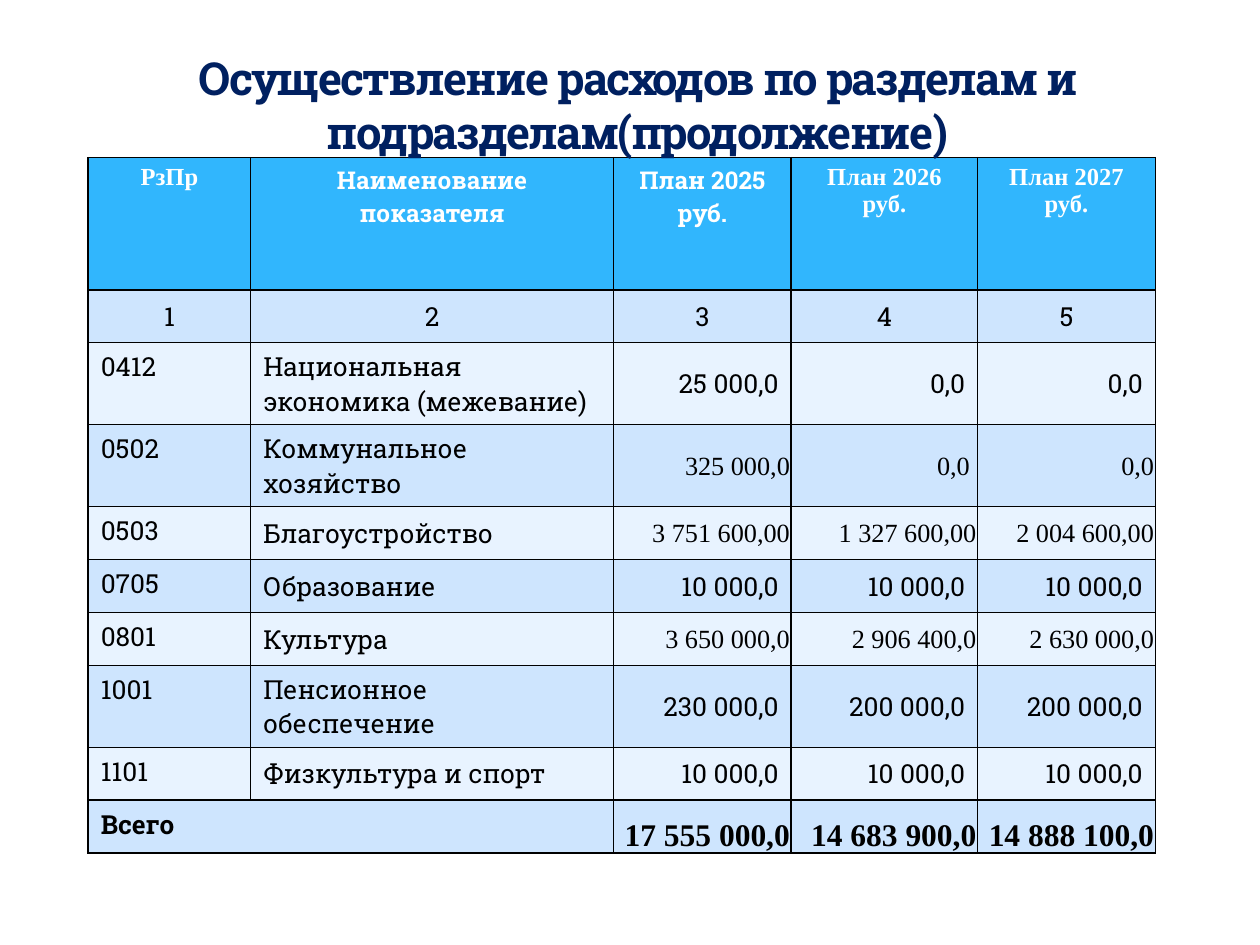
from dataclasses import dataclass, field

from lxml.etree import SubElement
from pptx import Presentation
from pptx.dml.color import RGBColor
from pptx.enum.text import MSO_ANCHOR as Anchor, PP_ALIGN as Align
from pptx.oxml.ns import qn
from pptx.slide import Slide
from pptx.util import Inches, Pt

COLORS = {
    "title": "002060",
    "header": "31B6FD",
    "band_dark": "CEE5FE",
    "band_light": "E8F3FF",
    "text": "000000",
    "header_text": "FFFFFF",
    "border": "000000",
}
SLAB, TIMES = "Roboto Slab", "Times New Roman"
HEADER_FONTS = [TIMES, SLAB, SLAB, TIMES, TIMES]
TIGHT_CODES = {"0502", "0503", "0801"}
COLUMN_WIDTHS = [12.9, 28.8, 14.1, 14.8, 14.1]
ROW_HEIGHTS = [10.5, 4.2, 5.9] + [4.2] * 7

TITLE = "Осуществление расходов по разделам и подразделам(продолжение)"
HEADER = ["РзПр", "Наименование показателя", "План 2025 руб.", "План 2026 руб.", "План 2027 руб."]
SECTIONS = [
    ["0412", "Национальная экономика (межевание)", "25 000,0", "0,0", "0,0"],
    ["0502", "Коммунальное хозяйство", "325 000,0", "0,0 ", "0,0"],
    ["0503", "Благоустройство", "3 751 600,00", "1 327 600,00", "2 004 600,00"],
    ["0705", "Образование", "10 000,0", "10 000,0", "10 000,0"],
    ["0801", "Культура", "3 650 000,0", "2 906 400,0", "2 630 000,0"],
    ["1001", "Пенсионное обеспечение", "230 000,0", "200 000,0", "200 000,0"],
    ["1101", "Физкультура и спорт", "10 000,0", "10 000,0", "10 000,0"],
]
TOTAL = ["Всего", "", "17 555 000,0", "14 683 900,0", "14 888 100,0"]


@dataclass
class BudgetSlide:
    """Style and current slide, laid out on a grid of 100 columns by 75 rows."""

    slide: Slide
    unit: int = Inches(0.1)
    colors: dict = field(default_factory=lambda: COLORS)

    def grid(self, *lengths):
        return [round(length * self.unit) for length in lengths]

    def color(self, name):
        return RGBColor.from_string(self.colors[name])

    def label(self, frame, text, size, font=SLAB, color="text", bold=False, align=Align.LEFT):
        paragraph = frame.paragraphs[0]
        paragraph.text = text
        paragraph.alignment = align
        paragraph.font.size = Pt(size)
        paragraph.font.name = font
        paragraph.font.bold = bold
        paragraph.font.color.rgb = self.color(color)
        return paragraph

    def title(self, text, left, top, width, height):
        shape = self.slide.shapes.add_textbox(*self.grid(left, top, width, height))
        frame = shape.text_frame
        frame.word_wrap = True
        frame.vertical_anchor = Anchor.BOTTOM
        frame.margin_top = frame.margin_bottom = 0
        paragraph = self.label(frame, text, 26, color="title", bold=True, align=Align.CENTER)
        paragraph.runs[0]._r.get_or_add_rPr().set("spc", "-100")

    def table(self, left, top, widths, heights):
        frame = self.slide.shapes.add_table(
            len(heights), len(widths), *self.grid(left, top, sum(widths), sum(heights))
        )
        table = frame.table
        for column, width in zip(table.columns, self.grid(*widths)):
            column.width = width
        for row, height in zip(table.rows, self.grid(*heights)):
            row.height = height
        return table

    def borders(self, cell):
        properties = cell._tc.get_or_add_tcPr()
        for index, side in enumerate(("a:lnL", "a:lnR", "a:lnT", "a:lnB")):
            line = properties.makeelement(qn(side), {"w": str(Pt(1))})
            fill = SubElement(line, qn("a:solidFill"))
            SubElement(fill, qn("a:srgbClr"), val=self.colors["border"])
            properties.insert(index, line)

    def cell(self, cell, text, fill, size=15, anchor=Anchor.TOP, tight=False, **style):
        cell.fill.solid()
        cell.fill.fore_color.rgb = self.color(fill)
        self.borders(cell)
        cell.vertical_anchor = anchor
        if tight:
            cell.margin_left = cell.margin_right = cell.margin_top = Inches(0.01)
            cell.margin_bottom = 0
        if text:
            self.label(cell.text_frame, text, size, **style)

    def amounts(self, cells, texts, fill, tight, **style):
        for cell, text in zip(cells, texts):
            self.cell(cell, text, fill, tight=tight, font=TIMES if tight else SLAB,
                      align=Align.RIGHT, **style)


def main():
    presentation = Presentation()
    presentation.slide_width, presentation.slide_height = Inches(10), Inches(7.5)
    budget = BudgetSlide(presentation.slides.add_slide(presentation.slide_layouts[6]))

    table = budget.table(7, 12.5, COLUMN_WIDTHS, ROW_HEIGHTS)
    rows = [list(row.cells) for row in table.rows]
    for index, (text, font) in enumerate(zip(HEADER, HEADER_FONTS)):
        budget.cell(rows[0][index], text, "header", size=14, font=font,
                    color="header_text", bold=True, align=Align.CENTER)
        budget.cell(rows[1][index], str(index + 1), "band_dark",
                    anchor=Anchor.MIDDLE, align=Align.CENTER)

    for index, (cells, section) in enumerate(zip(rows[2:], SECTIONS)):
        code, name, *amounts = section
        fill = "band_dark" if index % 2 else "band_light"
        budget.cell(cells[0], code, fill)
        budget.cell(cells[1], name, fill, anchor=Anchor.MIDDLE if index else Anchor.TOP)
        budget.amounts(cells[2:], amounts, fill, code in TIGHT_CODES, anchor=Anchor.MIDDLE)

    total = rows[-1]
    total[0].merge(total[1])
    for cell, text in zip(total[:2], TOTAL):
        budget.cell(cell, text, "band_dark", bold=True)
    budget.amounts(total[2:], TOTAL[2:], "band_dark", True,
                   anchor=Anchor.BOTTOM, size=18, bold=True)

    budget.title(TITLE, 12.2, 7.6, 76.8, 5)
    presentation.save("out.pptx")


if __name__ == "__main__":
    main()
